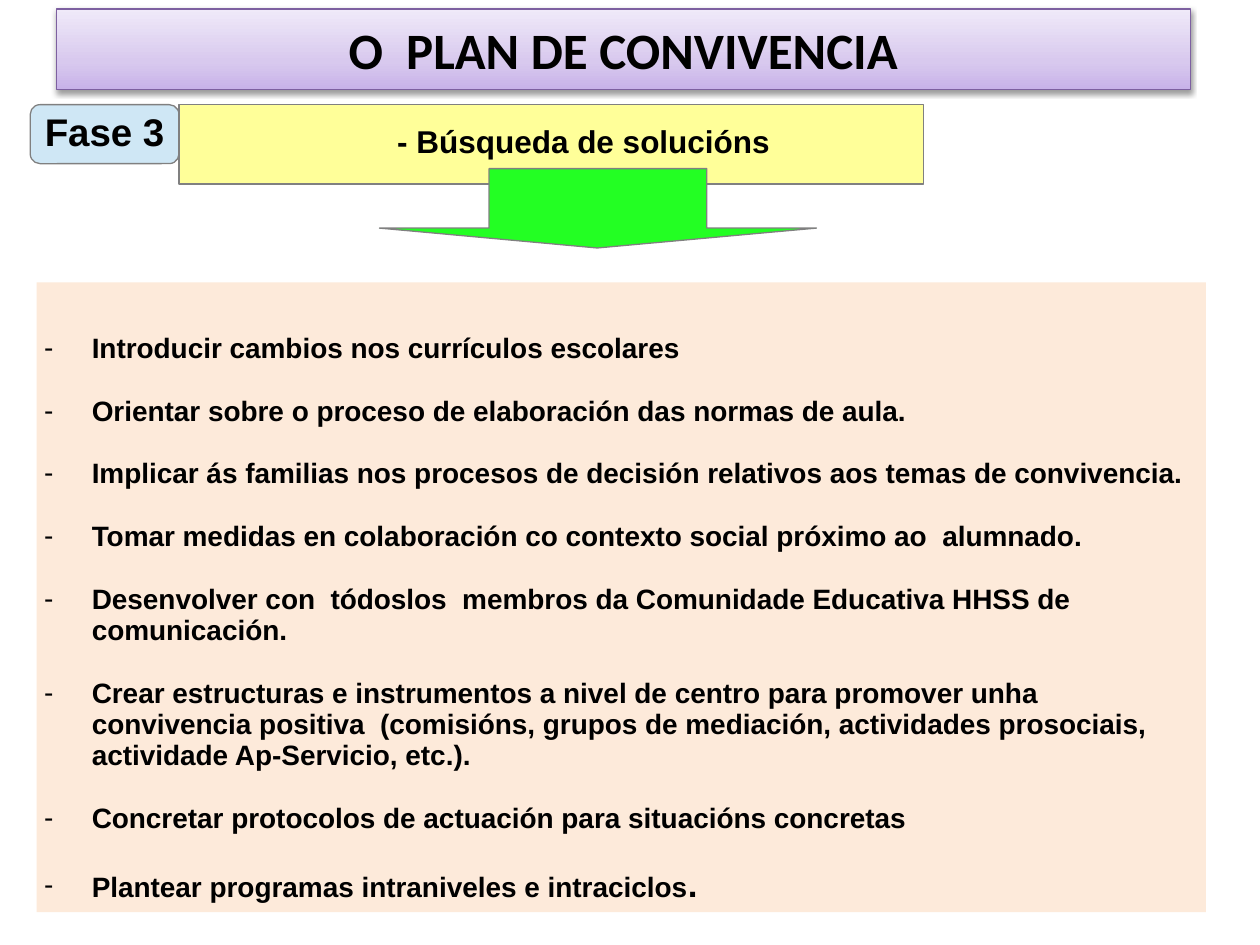
from dataclasses import dataclass

from pptx import Presentation
from pptx.dml.color import RGBColor
from pptx.enum.shapes import MSO_SHAPE
from pptx.enum.text import MSO_ANCHOR, MSO_AUTO_SIZE, PP_ALIGN
from pptx.oxml import parse_xml
from pptx.oxml.ns import nsdecls
from pptx.util import Cm, Pt


@dataclass(frozen=True)
class Theme:
    text: str = "000000"
    outline: str = "808080"
    title_outline: str = "7D60A0"
    title_gradient: tuple = ((0, "C8B2E9"), (35, "D8C9EE"), (100, "F0EAF9"))
    phase: str = "CFE7F5"
    topic: str = "FFFF99"
    arrow: str = "23FF23"
    panel: str = "FDEADA"
    title_size: float = 29.1
    phase_size: int = 22
    topic_size: int = 18
    list_size: int = 16
    final_stop_size: int = 20
    line_width: float = 0.75
    line_spacing: float = 0.93


theme = Theme()


def add_bold_run(paragraph, text, size, font_name="Arial"):
    run = paragraph.add_run()
    run.text = text
    run.font.name = font_name
    run.font.size = Pt(size)
    run.font.bold = True
    run.font.color.rgb = RGBColor.from_string(theme.text)


def paint(shape, fill):
    """Give the shape a flat fill, a thin grey outline and no shadow."""
    shape.shadow.inherit = False
    shape.fill.solid()
    shape.fill.fore_color.rgb = RGBColor.from_string(fill)
    shape.line.color.rgb = RGBColor.from_string(theme.outline)
    shape.line.width = Pt(theme.line_width)


presentation = Presentation()
presentation.slide_width = Cm(25.4)
presentation.slide_height = Cm(19.05)
slide = presentation.slides.add_slide(presentation.slide_layouts[1])

# Title banner
title = slide.shapes.title
title.left, title.top, title.width, title.height = Cm(1.14), Cm(0.18), Cm(22.86), Cm(1.63)
title.fill.gradient()
title.fill.gradient_angle = 90
stops = title.fill._fill._gradFill.gsLst
for stop in list(stops):
    stops.remove(stop)
for position, color in theme.title_gradient:
    stops.append(parse_xml(
        f'<a:gs {nsdecls("a")} pos="{position * 1000}"><a:srgbClr val="{color}"/></a:gs>'))
title.line.color.rgb = RGBColor.from_string(theme.title_outline)
title.line.width = Pt(theme.line_width)
title._element.spPr.append(parse_xml(
    f'<a:effectLst {nsdecls("a")}>'
    '<a:outerShdw blurRad="38100" dist="20320" dir="5400000" rotWithShape="0">'
    '<a:srgbClr val="000000"><a:alpha val="38000"/></a:srgbClr>'
    '</a:outerShdw></a:effectLst>'))
title.text_frame.auto_size = MSO_AUTO_SIZE.NONE
title.text_frame.vertical_anchor = MSO_ANCHOR.MIDDLE
paragraph = title.text_frame.paragraphs[0]
paragraph.alignment = PP_ALIGN.CENTER
add_bold_run(paragraph, "O  PLAN DE CONVIVENCIA", theme.title_size, "Calibri")

# Phase label and topic bar: a box and its caption, grouped
labels = (
    (MSO_SHAPE.ROUNDED_RECTANGLE, theme.phase, (0.61, 2.11, 3, 1.19),
     "Fase 3", theme.phase_size, (0.74, 2.11, 2.74, 1.17)),
    (MSO_SHAPE.RECTANGLE, theme.topic, (3.61, 2.11, 15.01, 1.6),
     "- Búsqueda de solucións", theme.topic_size, (7.09, 2.39, 9.35, 0.99)),
)
for preset, fill, box_place, text, size, caption_place in labels:
    group = slide.shapes.add_group_shape()
    box = group.shapes.add_shape(preset, *map(Cm, box_place))
    paint(box, fill)
    caption = group.shapes.add_textbox(*map(Cm, caption_place))
    frame = caption.text_frame
    frame.word_wrap = True
    frame.vertical_anchor = MSO_ANCHOR.MIDDLE
    frame.margin_left = frame.margin_right = Cm(0.15)
    frame.margin_top = frame.margin_bottom = Cm(0.15)
    paragraph = frame.paragraphs[0]
    paragraph.alignment = PP_ALIGN.CENTER
    paragraph.line_spacing = theme.line_spacing
    add_bold_run(paragraph, text, size)

# List of solutions
solutions = (
    "Introducir cambios nos currículos escolares",
    "Orientar sobre o proceso de elaboración das normas de aula.",
    "Implicar ás familias nos procesos de decisión relativos aos temas de convivencia.",
    "Tomar medidas en colaboración co contexto social próximo ao  alumnado.",
    "Desenvolver con  tódoslos  membros da Comunidade Educativa HHSS de comunicación.",
    "Crear estructuras e instrumentos a nivel de centro para promover unha convivencia "
    "positiva  (comisións, grupos de mediación, actividades prosociais, "
    "actividade Ap-Servicio, etc.).",
    "Concretar protocolos de actuación para situacións concretas",
    "Plantear programas intraniveles e intraciclos",
)
body = slide.placeholders[1]
body.left, body.top, body.width, body.height = Cm(0.74), Cm(5.69), Cm(23.57), Cm(12.7)
body.fill.solid()
body.fill.fore_color.rgb = RGBColor.from_string(theme.panel)
frame = body.text_frame
frame.auto_size = MSO_AUTO_SIZE.NONE
frame.word_wrap = True
frame.vertical_anchor = MSO_ANCHOR.TOP
frame.margin_left = frame.margin_right = frame.margin_bottom = Cm(0.15)
frame.margin_top = Cm(1.03)
for index, solution in enumerate(solutions):
    paragraph = frame.add_paragraph() if index else frame.paragraphs[0]
    paragraph.line_spacing = theme.line_spacing
    paragraph.space_before = Pt(18 if index else 0)
    properties = paragraph._p.get_or_add_pPr()
    properties.set("marL", str(Cm(0.96)))
    properties.set("indent", str(-Cm(0.96)))
    properties.append(parse_xml(f'<a:buFont {nsdecls("a")} typeface="Arial"/>'))
    properties.append(parse_xml(f'<a:buChar {nsdecls("a")} char="-"/>'))
    add_bold_run(paragraph, solution, theme.list_size)
add_bold_run(paragraph, ".", theme.final_stop_size)

# Arrow from the topic down to the list
arrow_points = ((7.65, 4.6), (9.86, 4.6), (9.86, 3.4), (14.25, 3.4),
                (14.25, 4.6), (16.46, 4.6), (12.04, 5))
start, *others = [(Cm(x), Cm(y)) for x, y in arrow_points]
builder = slide.shapes.build_freeform(*start)
builder.add_line_segments(others, close=True)
paint(builder.convert_to_shape(), theme.arrow)

presentation.save("out.pptx")
